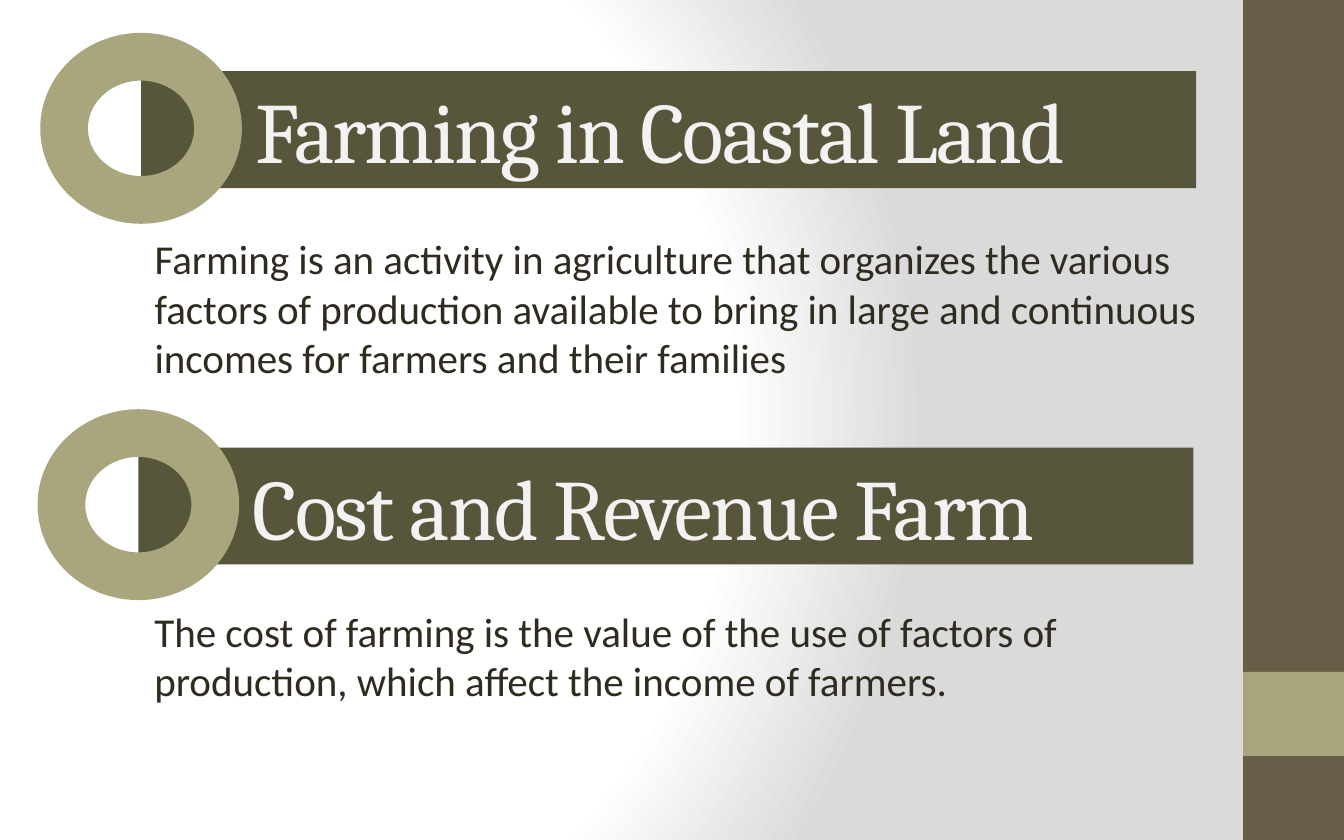
from dataclasses import dataclass

from lxml import etree
from pptx import Presentation
from pptx.dml.color import RGBColor
from pptx.enum.shapes import MSO_SHAPE
from pptx.enum.text import MSO_ANCHOR, MSO_AUTO_SIZE, PP_ALIGN
from pptx.oxml.ns import qn
from pptx.presentation import Presentation as PresentationType
from pptx.shapes.base import BaseShape
from pptx.slide import Slide
from pptx.util import Inches, Pt

RECTANGLE = MSO_SHAPE.RECTANGLE
DONUT = MSO_SHAPE.DONUT
TOP = MSO_ANCHOR.TOP
MIDDLE = MSO_ANCHOR.MIDDLE
LEFT = PP_ALIGN.LEFT
NO_AUTOFIT = MSO_AUTO_SIZE.NONE

BROWN = RGBColor(0x67, 0x5E, 0x47)
SAGE = RGBColor(0xA9, 0xA5, 0x7C)
OLIVE = RGBColor(0x58, 0x56, 0x3A)
DARK = RGBColor(0x2F, 0x2B, 0x20)
PALE = RGBColor(0xF2, 0xF2, 0xF2)
WHITE = RGBColor(0xFF, 0xFF, 0xFF)
GREY = RGBColor(0xDA, 0xDA, 0xDA)

SLIDE_WIDTH = Inches(10)
SLIDE_HEIGHT = Inches(6.25)


@dataclass(frozen=True)
class Box:
    """Position and size in percent of the slide."""

    left: float
    top: float
    width: float
    height: float

    def lengths(self) -> tuple[int, int, int, int]:
        return (
            round(SLIDE_WIDTH * self.left / 100),
            round(SLIDE_HEIGHT * self.top / 100),
            round(SLIDE_WIDTH * self.width / 100),
            round(SLIDE_HEIGHT * self.height / 100),
        )


@dataclass(frozen=True)
class Section:
    heading: str
    body: str
    bar: Box
    body_box: Box
    uses_placeholder_heading: bool

    @property
    def ring(self) -> Box:
        return Box(self.bar.left - 7.5, self.bar.top - 4.56, 15, 22.72)


SECTIONS = (
    Section(
        "Farming in Coastal Land",
        "Farming is an activity in agriculture that organizes the various factors "
        "of production available to bring in large and continuous incomes for "
        "farmers and their families",
        Box(10.5, 8.48, 78.5, 13.92),
        Box(10.5, 27.04, 81.2, 24.16),
        False,
    ),
    Section(
        "Cost and Revenue Farm",
        "The cost of farming is the value of the use of factors of production, "
        "which affect the income of farmers.",
        Box(10.3, 53.28, 78.5, 13.92),
        Box(10.5, 71.36, 78.5, 13.44),
        True,
    ),
)


def place(shape: BaseShape, box: Box) -> None:
    shape.left, shape.top, shape.width, shape.height = box.lengths()


def fill_shape(shape: BaseShape, color: RGBColor) -> None:
    shape.fill.solid()
    shape.fill.fore_color.rgb = color
    shape.line.fill.background()


def add_filled_shape(slide: Slide, kind: MSO_SHAPE, box: Box, color: RGBColor) -> BaseShape:
    shape = slide.shapes.add_shape(kind, *box.lengths())
    shape.shadow.inherit = False
    fill_shape(shape, color)
    return shape


def write_text(shape: BaseShape, text: str, *, font: str, size: float, color: RGBColor,
               anchor: MSO_ANCHOR = TOP, margin_left: float = 0.1,
               spacing: float = 0) -> None:
    frame = shape.text_frame
    frame.word_wrap = True
    frame.auto_size = NO_AUTOFIT
    frame.vertical_anchor = anchor
    frame.margin_left = Inches(margin_left)
    frame.text = text
    paragraph = frame.paragraphs[0]
    paragraph.alignment = LEFT
    paragraph.space_before = Pt(0)
    properties = paragraph._p.get_or_add_pPr()
    properties.set("marL", "0")
    properties.set("indent", "0")
    etree.SubElement(properties, qn("a:buNone"))
    run = paragraph.runs[0]
    run.font.name = font
    run.font.size = Pt(size)
    run.font.color.rgb = color
    if spacing:
        run._r.get_or_add_rPr().set("spc", str(round(spacing * 100)))


def paint_background(slide: Slide) -> None:
    slide.background.fill.gradient()
    gradient = slide.element.find(".//" + qn("a:gradFill"))
    for child in list(gradient):
        gradient.remove(child)
    stops = etree.SubElement(gradient, qn("a:gsLst"))
    for position, color in ((0, WHITE), (75, WHITE), (100, GREY)):
        stop = etree.SubElement(stops, qn("a:gs"), pos=str(position * 1000))
        etree.SubElement(stop, qn("a:srgbClr"), val=str(color))
    circle = etree.SubElement(gradient, qn("a:path"), path="circle")
    etree.SubElement(circle, qn("a:fillToRect"), l="20000", t="50000", r="100000", b="50000")


def draw_section(slide: Slide, section: Section) -> None:
    if section.uses_placeholder_heading:
        bar = slide.shapes.title
        place(bar, section.bar)
        fill_shape(bar, OLIVE)
        body = slide.shapes.add_textbox(*section.body_box.lengths())
    else:
        bar = add_filled_shape(slide, RECTANGLE, section.bar, OLIVE)
        body = slide.placeholders[1]
        place(body, section.body_box)
    write_text(bar, section.heading, font="Cambria", size=46, color=PALE,
               anchor=MIDDLE, margin_left=0.85, spacing=-1)
    write_text(body, section.body, font="Calibri", size=22, color=DARK)
    add_filled_shape(slide, DONUT, section.ring, SAGE)


def build() -> PresentationType:
    presentation = Presentation()
    presentation.slide_width = SLIDE_WIDTH
    presentation.slide_height = SLIDE_HEIGHT
    slide = presentation.slides.add_slide(presentation.slide_layouts[1])
    paint_background(slide)
    add_filled_shape(slide, RECTANGLE, Box(92.5, 0, 7.5, 100), BROWN)
    add_filled_shape(slide, RECTANGLE, Box(92.5, 80, 7.5, 10), SAGE)
    for section in SECTIONS:
        draw_section(slide, section)
    return presentation


if __name__ == "__main__":
    build().save("out.pptx")
